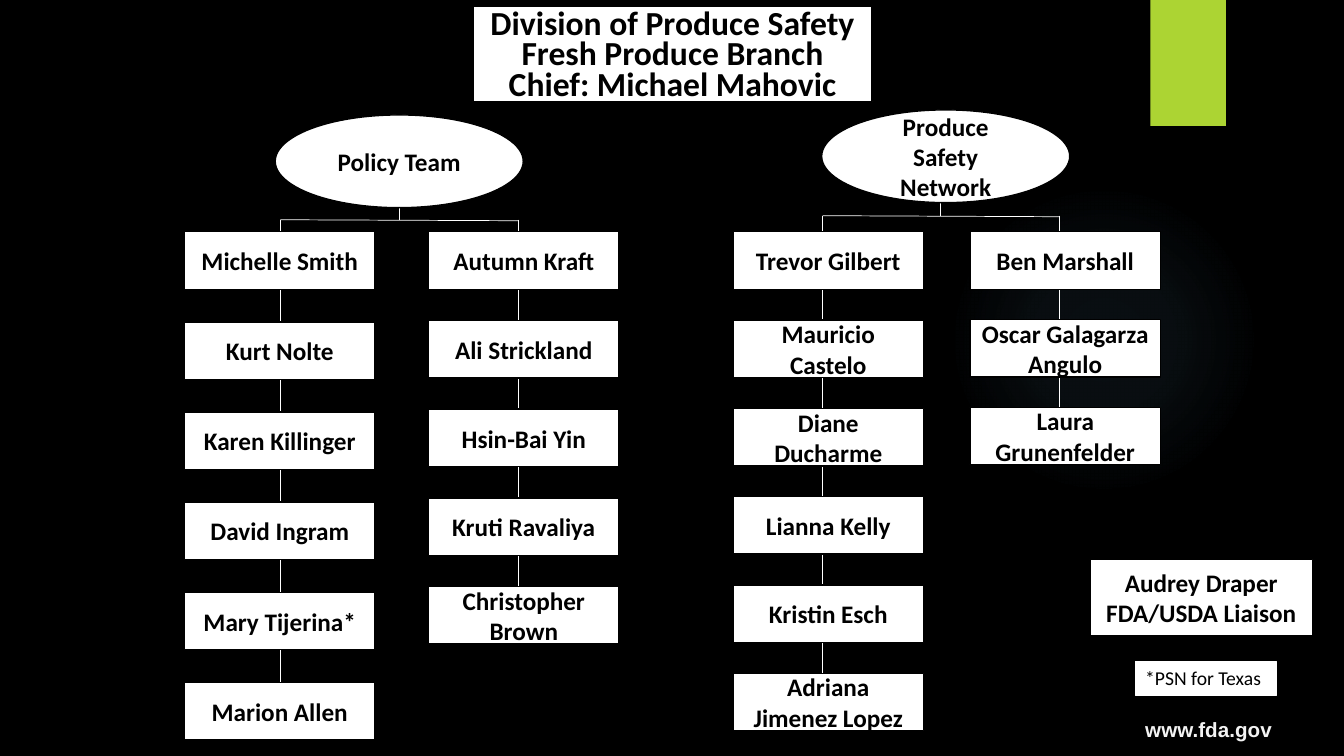
import pptx
import pptx.dml.color
import pptx.enum.shapes
import pptx.enum.text
import pptx.oxml
import pptx.oxml.ns
import pptx.util
from pptx.util import Inches

COLORS = {"black": "000000", "white": "FFFFFF", "green": "ACD433",
          "glow": "7AC4F0", "address": "F3F3F3"}
RECT = pptx.enum.shapes.MSO_SHAPE.RECTANGLE
OVAL = pptx.enum.shapes.MSO_SHAPE.OVAL
CENTER = pptx.enum.text.PP_ALIGN.CENTER
LEFT = pptx.enum.text.PP_ALIGN.LEFT
MIDDLE = pptx.enum.text.MSO_ANCHOR.MIDDLE
TOP = pptx.enum.text.MSO_ANCHOR.TOP


def rgb(name):
    return pptx.dml.color.RGBColor.from_string(COLORS[name])


def add_box(text, left, top, width, height, kind=RECT, fill="white", line="black",
            line_width=1, size=18, font="Calibri", color="black", bold=True,
            align=CENTER, anchor=MIDDLE, spacing=None, inset=0.1):
    """Add a shape with one paragraph per line of text; fill or line may be None."""
    box = slide.shapes.add_shape(kind, Inches(left), Inches(top), Inches(width), Inches(height))
    box.shadow.inherit = False
    if fill:
        box.fill.solid()
        box.fill.fore_color.rgb = rgb(fill)
    else:
        box.fill.background()
    if line:
        box.line.color.rgb = rgb(line)
        box.line.width = pptx.util.Pt(line_width)
    else:
        box.line.fill.background()
    frame = box.text_frame
    frame.word_wrap = True
    frame.vertical_anchor = anchor
    frame.margin_left = frame.margin_right = Inches(inset)
    for number, words in enumerate(text.split("\n") if text else []):
        paragraph = frame.add_paragraph() if number else frame.paragraphs[0]
        paragraph.alignment = align
        if spacing:
            paragraph.line_spacing = pptx.util.Pt(spacing)
        run = paragraph.add_run()
        run.text = words
        run.font.size = pptx.util.Pt(size)
        run.font.name = font
        run.font.bold = bold
        run.font.color.rgb = rgb(color)
    return box


def add_line(x1, y1, x2, y2):
    line = slide.shapes.add_connector(pptx.enum.shapes.MSO_CONNECTOR.STRAIGHT,
                                      Inches(x1), Inches(y1), Inches(x2), Inches(y2))
    line.line.color.rgb = rgb("white")
    line.line.width = pptx.util.Pt(0.5)
    properties = line._element.spPr
    properties.append(properties.makeelement(pptx.oxml.ns.qn("a:effectLst"), {}))


presentation = pptx.Presentation()
presentation.slide_width = Inches(13.33)
presentation.slide_height = Inches(7.5)
slide = presentation.slides.add_slide(presentation.slide_layouts[6])
slide.background.fill.solid()
slide.background.fill.fore_color.rgb = rgb("black")

# Backdrop: faint radial glow and green tab
glow = add_box("", 9.41, 1.83, 3.08, 3.08, kind=OVAL, fill=None, line=None)
stops = "".join(
    f'<a:gs pos="{position * 1000}"><a:srgbClr val="{COLORS["glow"]}">'
    f'<a:alpha val="{alpha * 1000}"/></a:srgbClr></a:gs>'
    for position, alpha in [(0, 7), (36, 6), (69, 0)])
gradient = pptx.oxml.parse_xml(
    f'<a:gradFill {pptx.oxml.ns.nsdecls("a")}><a:gsLst>{stops}</a:gsLst>'
    '<a:path path="circle"><a:fillToRect l="50000" t="50000" r="50000" b="50000"/></a:path>'
    '</a:gradFill>')
no_fill = glow._element.spPr.find(pptx.oxml.ns.qn("a:noFill"))
glow._element.spPr.replace(no_fill, gradient)
add_box("", 11.41, 0, 0.75, 1.25, fill="green", line=None)

add_box("Division of Produce Safety\nFresh Produce Branch\nChief: Michael Mahovic",
        4.69, 0.06, 3.96, 0.95, size=24, anchor=TOP, spacing=22)

# Each team: name, oval left and top, stem x, bar y, columns
# Each column: box left, line x, row step, members
teams = [
    ("Policy Team", 2.73, 1.14, 3.96, 2.18, [
        (1.83, 2.78, 0.894, ["Michelle Smith", "Kurt Nolte", "Karen Killinger",
                             "David Ingram", "Mary Tijerina*", "Marion Allen"]),
        (4.25, 5.14, 0.88, ["Autumn Kraft", "Ali Strickland", "Hsin-Bai Yin",
                            "Kruti Ravaliya", "Christopher Brown"])]),
    ("Produce Safety Network", 8.15, 1.09, 9.33, 2.14, [
        (7.27, 8.16, 0.876, ["Trevor Gilbert", "Mauricio Castelo", "Diane Ducharme",
                             "Lianna Kelly", "Kristin Esch", "Adriana Jimenez Lopez"]),
        (9.62, 10.51, 0.87, ["Ben Marshall", "Oscar Galagarza Angulo",
                             "Laura Grunenfelder"])]),
]
first_row = 2.3
for team, oval_left, oval_top, stem_x, bar_y, columns in teams:
    add_line(stem_x, bar_y, stem_x, oval_top + 0.9)
    add_line(columns[0][1], bar_y, columns[1][1], bar_y + 0.01)
    add_box(team, oval_left, oval_top, 2.46, 0.92, kind=OVAL, inset=0.15)
    for left, line_x, step, members in columns:
        add_line(line_x, bar_y, line_x, first_row + step * (len(members) - 1))
        for row, member in enumerate(members):
            add_box(member, left, first_row + row * step, 1.89, 0.57)

add_box("Audrey Draper\nFDA/USDA Liaison", 10.81, 5.55, 2.21, 0.76)
add_box("*PSN for Texas", 11.26, 6.56, 1.4, 0.34, line="white", line_width=0.75,
        size=14, bold=False, align=LEFT, anchor=TOP)
add_box("www.fda.gov", 11.26, 7.06, 1.49, 0.35, fill=None, line=None, size=14.7,
        font="Arial", color="address", align=LEFT, anchor=TOP)

presentation.save("out.pptx")
